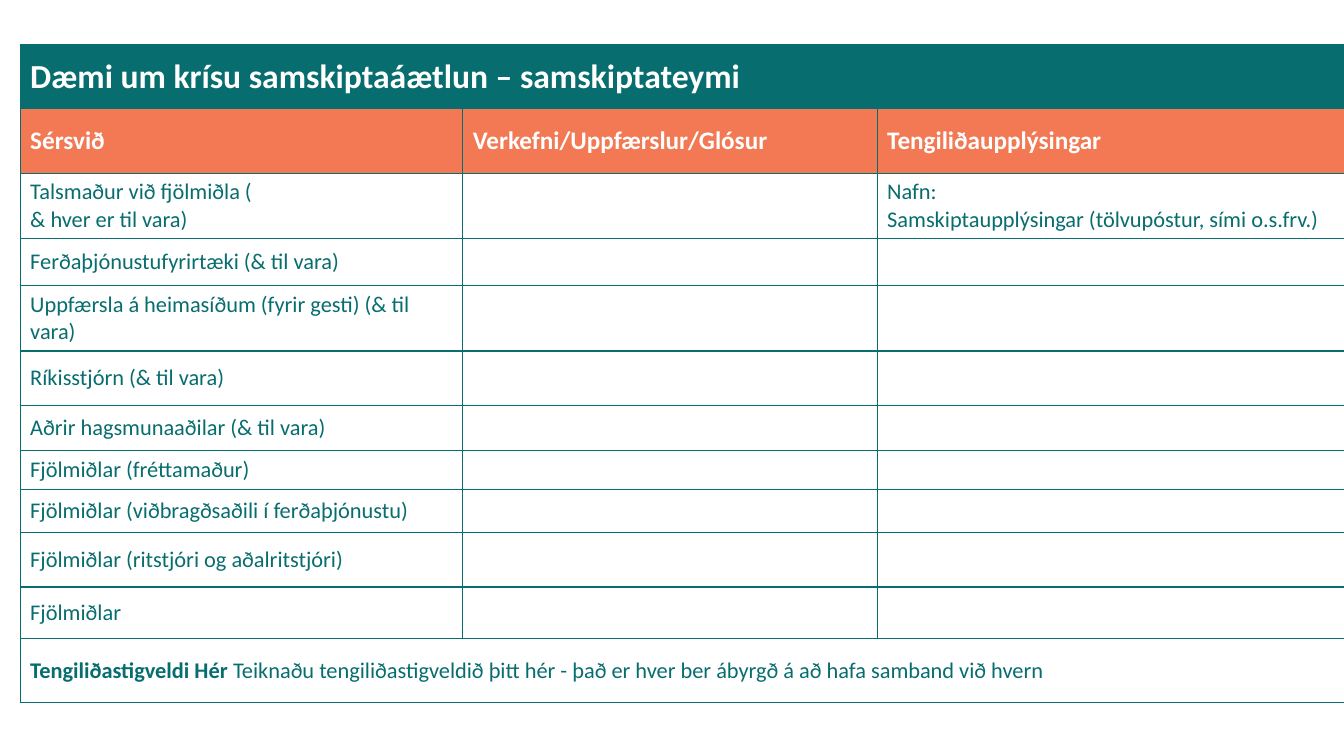
from lxml import etree
from pptx import Presentation
from pptx.dml.color import RGBColor
from pptx.enum.text import MSO_ANCHOR
from pptx.oxml.ns import qn
from pptx.util import Inches, Pt

MIDDLE = MSO_ANCHOR.MIDDLE
FONT = "Calibri"
TEAL, ORANGE, WHITE = "086D6E", "F27954", "FFFFFF"

TITLE = "Dæmi um krísu samskiptaáætlun – samskiptateymi"
HEADINGS = ["Sérsvið", "Verkefni/Uppfærslur/Glósur", "Tengiliðaupplýsingar"]
CONTACT = "Nafn:\nSamskiptaupplýsingar (tölvupóstur, sími o.s.frv.)"
ROLES = [
    "Talsmaður við fjölmiðla (\n& hver er til vara)",
    "Ferðaþjónustufyrirtæki (& til vara)",
    "Uppfærsla á heimasíðum (fyrir gesti) (& til vara)",
    "Ríkisstjórn (& til vara)",
    "Aðrir hagsmunaaðilar (& til vara)",
    "Fjölmiðlar (fréttamaður)",
    "Fjölmiðlar (viðbragðsaðili í ferðaþjónustu)",
    "Fjölmiðlar (ritstjóri og aðalritstjóri)",
    "Fjölmiðlar",
]
HIERARCHY_LABEL = "Tengiliðastigveldi Hér "
HIERARCHY_NOTE = ("Teiknaðu tengiliðastigveldið þitt hér - "
                  "það er hver ber ábyrgð á að hafa samband við hvern")

COL_WIDTHS = [4.39, 4.11, 4.83]
ROW_HEIGHTS = [0.64, 0.64, 0.64, 0.47, 0.65, 0.54,
               0.45, 0.38, 0.43, 0.54, 0.51, 0.64]


def rgb(color):
    return RGBColor.from_string(color)


def add_text(p, text, size=16, color=TEAL, bold=False):
    r = p.add_run()
    r.text = text
    r.font.name = FONT
    r.font.size = Pt(size)
    r.font.bold = bold
    r.font.color.rgb = rgb(color)


def style_cell(cell, fill):
    """Border all four sides, then fill the cell."""
    tc_pr = cell._tc.get_or_add_tcPr()
    for side in ("a:lnL", "a:lnR", "a:lnT", "a:lnB"):
        ln = etree.SubElement(tc_pr, qn(side), w=str(Pt(1)))
        solid = etree.SubElement(ln, qn("a:solidFill"))
        etree.SubElement(solid, qn("a:srgbClr"), val=TEAL)
    cell.fill.solid()
    cell.fill.fore_color.rgb = rgb(fill)
    cell.vertical_anchor = MIDDLE


def write_cell(cell, text, **fmt):
    tf = cell.text_frame
    for i, line in enumerate(text.split("\n")):
        p = tf.add_paragraph() if i else tf.paragraphs[0]
        add_text(p, line, **fmt)


def add_plan_table(s, left, top, width, height):
    frame = s.shapes.add_table(len(ROW_HEIGHTS), len(COL_WIDTHS), Inches(left),
                               Inches(top), Inches(width), Inches(height))
    table = frame.table
    for col, w in zip(table.columns, COL_WIDTHS):
        col.width = Inches(w)
    for row, h in zip(table.rows, ROW_HEIGHTS):
        row.height = Inches(h)

    # Borders and fills
    fills = [TEAL, ORANGE] + [WHITE] * (len(ROW_HEIGHTS) - 2)
    for row, fill in zip(table.rows, fills):
        for cell in row.cells:
            style_cell(cell, fill)

    # Title and column headings
    last_row, last_col = len(ROW_HEIGHTS) - 1, len(COL_WIDTHS) - 1
    for r in (0, last_row):
        table.cell(r, 0).merge(table.cell(r, last_col))
    write_cell(table.cell(0, 0), TITLE, size=24, color=WHITE, bold=True)
    for c, heading in enumerate(HEADINGS):
        write_cell(table.cell(1, c), heading, size=18, color=WHITE, bold=True)

    # Roles; the empty cells carry the body size so rows keep their height
    for r, role in enumerate(ROLES, start=2):
        contact = CONTACT if r == 2 else ""
        for c, text in enumerate([role, "", contact]):
            write_cell(table.cell(r, c), text)

    # Contact hierarchy
    p = table.cell(last_row, 0).text_frame.paragraphs[0]
    add_text(p, HIERARCHY_LABEL, bold=True)
    add_text(p, HIERARCHY_NOTE)


def main():
    prs = Presentation()
    prs.slide_width, prs.slide_height = Inches(13.33), Inches(7.5)
    s = prs.slides.add_slide(prs.slide_layouts[6])
    add_plan_table(s, 0.2, 0.44, sum(COL_WIDTHS), sum(ROW_HEIGHTS))
    prs.save("out.pptx")


if __name__ == "__main__":
    main()
